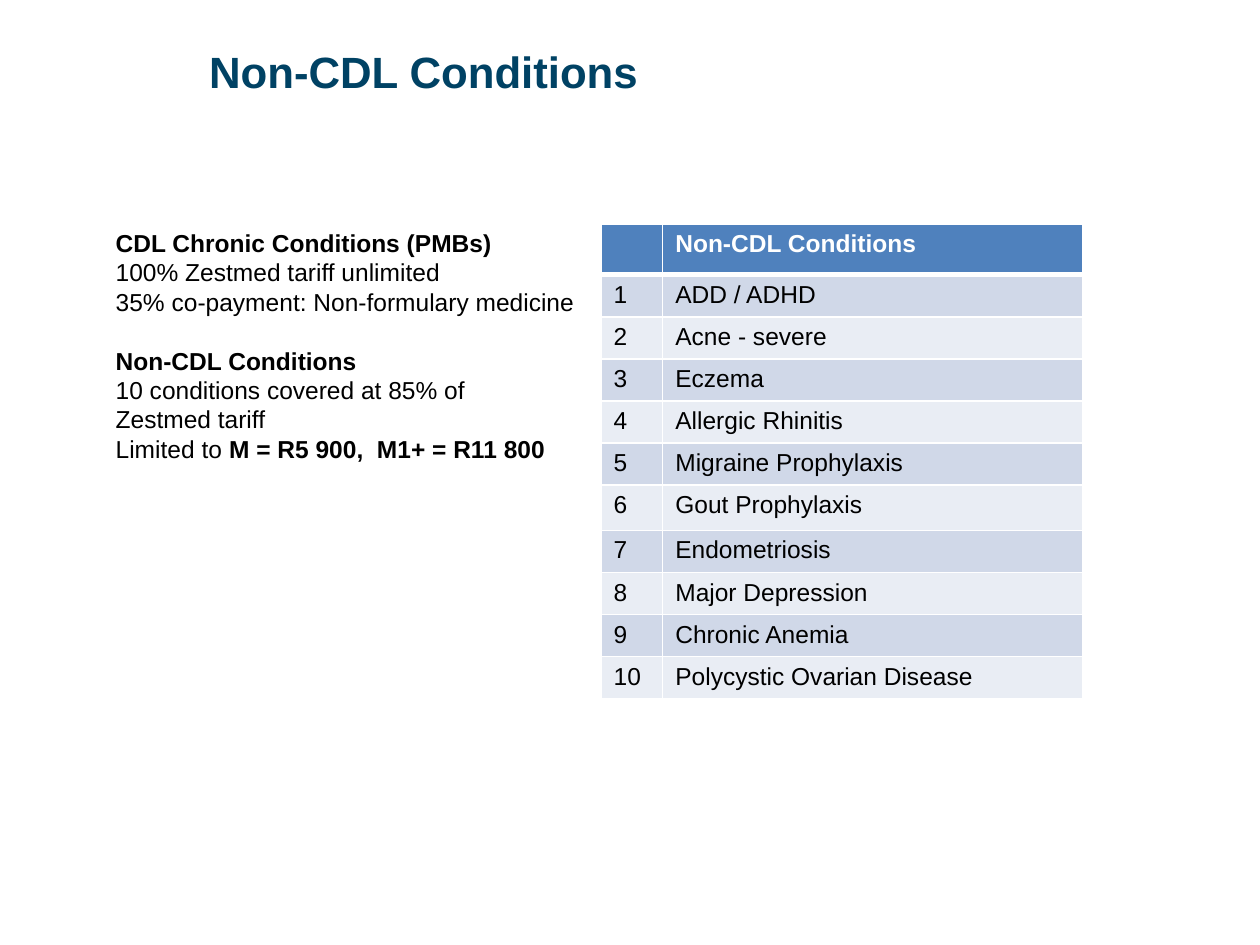
from lxml import etree
from pptx import Presentation
from pptx.dml.color import RGBColor
from pptx.enum.text import PP_ALIGN
from pptx.oxml.ns import qn
from pptx.util import Inches, Pt

LEFT, JUSTIFY = PP_ALIGN.LEFT, PP_ALIGN.JUSTIFY
NAVY = RGBColor(0x00, 0x42, 0x64)
BLACK = RGBColor(0x00, 0x00, 0x00)
WHITE = RGBColor(0xFF, 0xFF, 0xFF)
HEADER_BLUE = RGBColor(0x4F, 0x81, 0xBD)
BAND_DARK = RGBColor(0xD0, 0xD8, 0xE8)
BAND_LIGHT = RGBColor(0xE9, 0xED, 0xF4)

CONDITIONS = [
    "ADD / ADHD", "Acne - severe", "Eczema", "Allergic Rhinitis",
    "Migraine Prophylaxis", "Gout Prophylaxis", "Endometriosis",
    "Major Depression", "Chronic Anemia", "Polycystic Ovarian Disease",
]
# Each line: space before in points, then (text, bold) runs
BENEFITS = [
    (0, [("CDL Chronic Conditions (PMBs)", True)]),
    (0, [("100% Zestmed tariff unlimited", False)]),
    (0, [("35% co-payment: Non-formulary medicine", False)]),
    (16.8, [("Non-CDL Conditions", True)]),
    (0, [("10 conditions covered at 85% of", False)]),
    (0, [("Zestmed tariff", False)]),
    (0, [("Limited to ", False), ("M = R5 900,  M1+ = R11 800", True)]),
]


def write(paragraph, text, size=14, color=BLACK, bold=False, align=LEFT):
    paragraph.alignment = align
    run = paragraph.add_run()
    run.text = text
    run.font.name = "Arial"
    run.font.size = Pt(size)
    run.font.bold = bold
    run.font.color.rgb = color


def style_cell(cell, fill, bottom_width):
    """Give the cell white borders and a solid fill."""
    properties = cell._tc.get_or_add_tcPr()
    for side, width in (("L", 1), ("R", 1), ("T", 1), ("B", bottom_width)):
        line = etree.SubElement(properties, qn(f"a:ln{side}"), w=str(Pt(width)))
        solid = etree.SubElement(line, qn("a:solidFill"))
        etree.SubElement(solid, qn("a:srgbClr"), val=str(WHITE))
    cell.fill.solid()
    cell.fill.fore_color.rgb = fill


prs = Presentation()
prs.slide_width = Inches(10)
prs.slide_height = Inches(7.5)
slide = prs.slides.add_slide(prs.slide_layouts[6])

title = slide.shapes.add_textbox(
    Inches(0.5), Inches(0.31), Inches(5.49), Inches(0.97)).text_frame
title.word_wrap = True
title.margin_left = Inches(1.16)
write(title.paragraphs[0], "Non-CDL Conditions", size=25, color=NAVY, bold=True)

benefits = slide.shapes.add_textbox(
    Inches(0.82), Inches(1.2), Inches(3.86), Inches(3.16)).text_frame
benefits.word_wrap = True
benefits.margin_top = Inches(0.61)
for index, (space, runs) in enumerate(BENEFITS):
    paragraph = benefits.add_paragraph() if index else benefits.paragraphs[0]
    if space:
        paragraph.space_before = Pt(space)
    for text, bold in runs:
        write(paragraph, text, bold=bold, align=JUSTIFY)

rows = [("", "Non-CDL Conditions")]
rows += [(str(number), name) for number, name in enumerate(CONDITIONS, 1)]
table = slide.shapes.add_table(
    len(rows), 2, Inches(4.77), Inches(1.78), Inches(3.82), Inches(3.75)).table
table.columns[0].width = Inches(0.49)
table.columns[1].width = Inches(3.33)
row_heights = {0: 0.39, 6: 0.36}

for row, texts in enumerate(rows):
    table.rows[row].height = Inches(row_heights.get(row, 0.33))
    is_header = row == 0
    fill = HEADER_BLUE if is_header else BAND_DARK if row % 2 else BAND_LIGHT
    for column, text in enumerate(texts):
        cell = table.cell(row, column)
        style_cell(cell, fill, bottom_width=3 if is_header else 1)
        if text:
            write(cell.text_frame.paragraphs[0], text,
                  color=WHITE if is_header else BLACK, bold=is_header)

prs.save("out.pptx")
